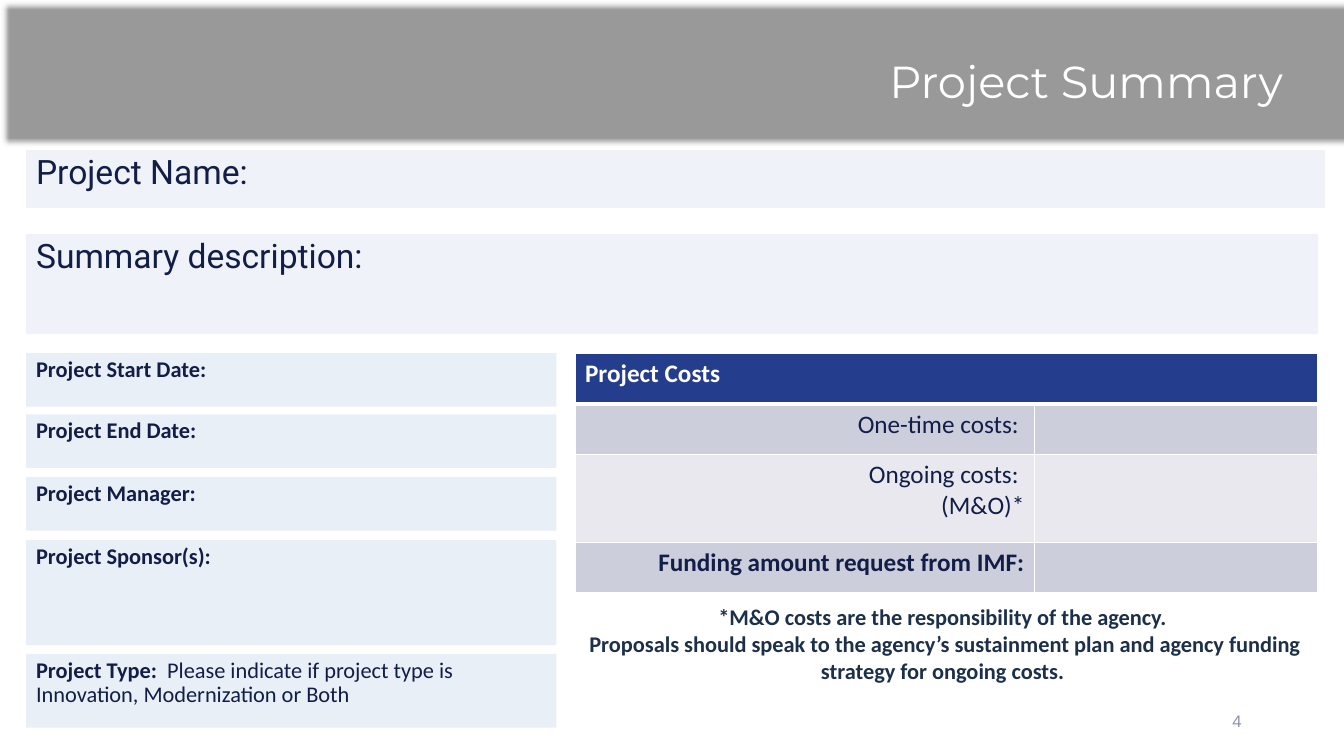
from dataclasses import dataclass

from lxml.etree import SubElement
from pptx import Presentation
from pptx.dml.color import RGBColor
from pptx.enum.shapes import MSO_SHAPE
from pptx.enum.text import MSO_ANCHOR, PP_ALIGN
from pptx.oxml.ns import qn
from pptx.util import Cm, Pt

COLORS = {
    "banner": "999999", "navy": "253D8D", "pale": "E1E9F5", "edge": "F2F2F2",
    "ink": "121E47", "note": "1C304A", "white": "FFFFFF",
    "band": "CDCEDB", "light": "E8E8EE", "number": "8E92B3",
}


@dataclass
class Style:
    font: str
    size: int
    color: str
    bold: bool = False
    align: PP_ALIGN = PP_ALIGN.LEFT
    spacing: float = 1.0


@dataclass
class Panel:
    """A pale field; lengths in cm, opacity in percent."""
    label: str
    top: float
    height: float
    style: Style
    width: float = 13.36
    opacity: int = 70
    detail: str = ""
    line: str = ""


@dataclass
class Caption:
    lines: list[str]
    box: tuple[float, float, float, float]
    style: Style
    anchor: MSO_ANCHOR = MSO_ANCHOR.MIDDLE
    inset: float = 0.13


@dataclass
class CostRow:
    lines: list[str]
    height: float
    fill: str
    style: Style


HEADING = Style("Roboto", 24, "ink", spacing=0.9)
FIELD = Style("Calibri", 16, "ink", True, spacing=0.9)
COST = Style("Calibri", 18, "ink", align=PP_ALIGN.RIGHT)
TOTAL = Style("Calibri", 18, "ink", True, PP_ALIGN.RIGHT)

PANELS = [
    Panel("Project Name:", 3.79, 1.45, HEADING, 32.72, 50, line="edge"),
    Panel("Summary description:", 5.9, 2.52, HEADING, 32.56, 50),
    Panel("Project Start Date:", 8.9, 1.35, FIELD),
    Panel("Project End Date:", 10.44, 1.35, FIELD),
    Panel("Project Manager:", 12.02, 1.35, FIELD),
    Panel("Project Sponsor(s):", 13.61, 2.65, FIELD),
    Panel("Project Type:  ", 16.48, 1.86, FIELD,
          detail="Please indicate if project type is Innovation, Modernization or Both"),
]

CAPTIONS = [
    Caption(["Project Summary"], (21.74, 1.07, 10.85, 2.11),
            Style("Montserrat", 32, "white", align=PP_ALIGN.RIGHT, spacing=0.9)),
    Caption(["*M&O costs are the responsibility of the agency. ",
             "Proposals should speak to the agency’s sustainment plan and agency "
             "funding strategy for ongoing costs. "],
            (14.46, 14.95, 18.72, 2.52),
            Style("Calibri", 16, "note", True, PP_ALIGN.CENTER), MSO_ANCHOR.TOP, 0.25),
    Caption(["4"], (23.92, 17.65, 7.62, 1.02),
            Style("Arial", 12, "number", align=PP_ALIGN.RIGHT)),
]

COST_ROWS = [
    CostRow(["Project Costs"], 1.27, "navy", Style("Calibri", 18, "white", True)),
    CostRow(["One-time costs: "], 1.27, "band", COST),
    CostRow(["Ongoing costs: ", "(M&O)*"], 2.21, "light", COST),
    CostRow(["Funding amount request from IMF:"], 1.27, "band", TOTAL),
]


def rgb(name: str) -> RGBColor:
    return RGBColor.from_string(COLORS[name])


def write(tf, lines: list[str], style: Style) -> None:
    for i, line in enumerate(lines):
        p = tf.add_paragraph() if i else tf.paragraphs[0]
        p.add_run().text = line
        p.alignment = style.align
        p.line_spacing = style.spacing
        p.font.name = style.font
        p.font.size = Pt(style.size)
        p.font.bold = style.bold
        p.font.color.rgb = rgb(style.color)


def add_box(s, left: float, top: float, width: float, height: float, color: str):
    sp = s.shapes.add_shape(MSO_SHAPE.RECTANGLE, Cm(left), Cm(top), Cm(width), Cm(height))
    sp.shadow.inherit = False
    sp.fill.solid()
    sp.fill.fore_color.rgb = rgb(color)
    sp.line.fill.background()
    return sp


def add_banner(s) -> None:
    """Grey strip with soft edges, bleeding slightly off the right side."""
    sp = add_box(s, 0, 0, 34.1, 3.73, "banner")
    effects = sp._element.spPr.find(qn("a:effectLst"))
    SubElement(effects, qn("a:softEdge"), rad=str(Pt(4)))


def add_panel(s, panel: Panel) -> None:
    sp = add_box(s, 0.66, panel.top, panel.width, panel.height, "pale")
    color = sp._element.spPr.find(qn("a:solidFill"))[0]
    SubElement(color, qn("a:alpha"), val=str(panel.opacity * 1000))
    if panel.line:
        sp.line.color.rgb = rgb(panel.line)
        sp.line.width = Pt(0.75)
    tf = sp.text_frame
    tf.word_wrap = True
    tf.vertical_anchor = MSO_ANCHOR.TOP
    write(tf, [panel.label], panel.style)
    if panel.detail:
        r = tf.paragraphs[0].add_run()
        r.text = panel.detail
        r.font.bold = False


def add_caption(s, caption: Caption) -> None:
    tf = s.shapes.add_textbox(*map(Cm, caption.box)).text_frame
    tf.word_wrap = True
    tf.vertical_anchor = caption.anchor
    tf.margin_top = tf.margin_bottom = Cm(caption.inset)
    write(tf, caption.lines, caption.style)


def set_borders(cell, top: float, bottom: float) -> None:
    widths = {"lnL": 1, "lnR": 1, "lnT": top, "lnB": bottom}
    for side, width in widths.items():
        ln = SubElement(cell._tc.get_or_add_tcPr(), qn(f"a:{side}"), w=str(Pt(width)))
        SubElement(SubElement(ln, qn("a:solidFill")), qn("a:srgbClr"), val=COLORS["white"])


def add_costs(s) -> None:
    height = sum(row.height for row in COST_ROWS)
    table = s.shapes.add_table(len(COST_ROWS), 2, Cm(14.49), Cm(8.91),
                               Cm(18.72), Cm(height)).table
    for column, width in zip(table.columns, (11.58, 7.14)):
        column.width = Cm(width)
    for i, row in enumerate(COST_ROWS):
        table.rows[i].height = Cm(row.height)
        for cell in table.rows[i].cells:
            set_borders(cell, 3 if i == 1 else 1, 3 if i == 0 else 1)
            cell.fill.solid()
            cell.fill.fore_color.rgb = rgb(row.fill)
        write(table.cell(i, 0).text_frame, row.lines, row.style)
    table.cell(0, 0).merge(table.cell(0, 1))


def main() -> None:
    prs = Presentation()
    prs.slide_width, prs.slide_height = Cm(33.87), Cm(19.05)
    s = prs.slides.add_slide(prs.slide_layouts[6])
    add_banner(s)
    for panel in PANELS:
        add_panel(s, panel)
    add_costs(s)
    for caption in CAPTIONS:
        add_caption(s, caption)
    prs.save("out.pptx")


if __name__ == "__main__":
    main()
